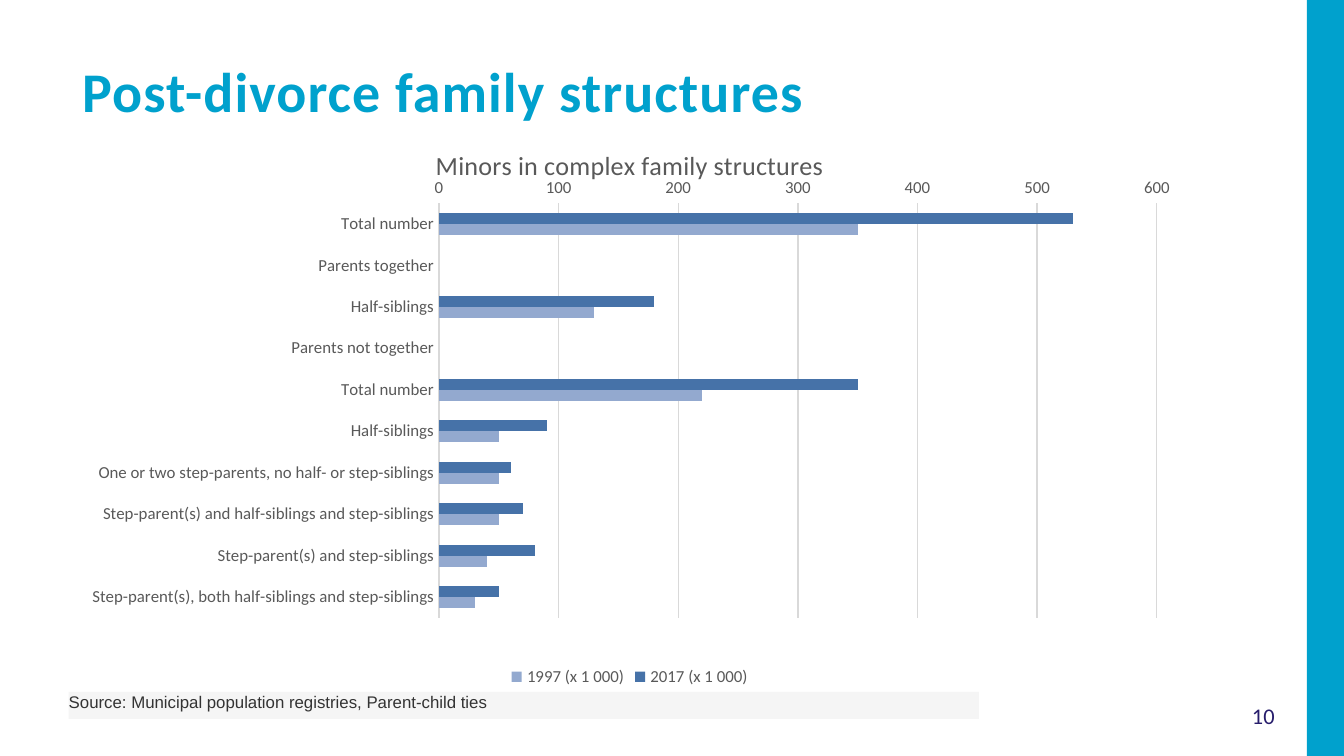
from dataclasses import dataclass

from lxml import etree
from pptx import Presentation
from pptx.chart.data import CategoryChartData
from pptx.dml.color import RGBColor
from pptx.enum import chart as charts, shapes, text
from pptx.oxml import ns
from pptx.util import Cm, Pt


@dataclass(frozen=True)
class Theme:
    font: str = "Calibri"
    source_font: str = "Arial"
    accent: str = "00A1CD"
    number: str = "271D6C"
    panel: str = "F5F5F5"
    ink: str = "333333"
    label: str = "595959"
    grid: str = "D9D9D9"
    title_size: float = 30
    chart_title_size: float = 14
    number_size: float = 12
    small_size: float = 9


THEME = Theme()
LEFT, WIDTH = Cm(1.3), Cm(21.2)
CHART_TOP, CHART_BOTTOM = Cm(2.34), Cm(13.08)

CATEGORIES = [
    "Total number",
    "Parents together",
    "Half-siblings",
    "Parents not together",
    "Total number",
    "Half-siblings",
    "One or two step-parents, no half- or step-siblings",
    "Step-parent(s) and half-siblings and step-siblings",
    "Step-parent(s) and step-siblings",
    "Step-parent(s), both half-siblings and step-siblings",
]
SERIES = [
    ("2017 (x 1 000)", "4672A8", [530, None, 180, None, 350, 90, 60, 70, 80, 50]),
    ("1997 (x 1 000)", "93A9CF", [350, None, 130, None, 220, 50, 50, 50, 40, 30]),
]


def style_font(font, size, color, name=THEME.font, bold=False):
    font.size, font.name, font.bold = Pt(size), name, bold
    font.color.rgb = RGBColor.from_string(color)


def add_span(para, words, size, color, **style):
    span = para.add_run()
    span.text = words
    style_font(span.font, size, color, **style)
    return span


def add_block(page, left, top, width, height, color):
    block = page.shapes.add_shape(
        shapes.MSO_SHAPE.RECTANGLE, left, top, width, height)
    block.shadow.inherit = False
    block.fill.solid()
    block.fill.fore_color.rgb = RGBColor.from_string(color)
    block.line.fill.background()
    return block


def set_title(page, words):
    title = page.shapes.title
    title.left, title.top, title.width, title.height = LEFT, Cm(0.94), WIDTH, Cm(1.4)
    frame = title.text_frame
    frame.word_wrap = True
    frame.auto_size = text.MSO_AUTO_SIZE.NONE
    frame.vertical_anchor = text.MSO_ANCHOR.TOP
    para = frame.paragraphs[0]
    para.alignment = text.PP_ALIGN.LEFT
    span = add_span(para, words, THEME.title_size, THEME.accent, bold=True)
    span.font._element.set("spc", "60")


def add_source(page, words):
    block = add_block(page, LEFT, CHART_BOTTOM, Cm(17.2), Cm(0.51), THEME.panel)
    frame = block.text_frame
    frame.word_wrap = True
    frame.vertical_anchor = text.MSO_ANCHOR.MIDDLE
    frame.margin_left = frame.margin_top = frame.margin_right = 0
    frame.margin_bottom = Cm(0.13)
    para = frame.paragraphs[0]
    para.alignment = text.PP_ALIGN.LEFT
    add_span(para, words, THEME.small_size, THEME.ink, name=THEME.source_font)


def add_page_number(page, number):
    box = page.shapes.add_textbox(Cm(23.06), CHART_BOTTOM, Cm(1.63), Cm(0.89))
    frame = box.text_frame
    frame.word_wrap = True
    frame.vertical_anchor = text.MSO_ANCHOR.MIDDLE
    para = frame.paragraphs[0]
    para.alignment = text.PP_ALIGN.CENTER
    add_span(para, str(number), THEME.number_size, THEME.number)


def place_plot(chart, **fractions):
    """Fix the inner plot area as fractions (x, y, w, h) of the chart."""
    plot_area = chart._chartSpace.chart.plotArea
    for old in plot_area.findall(ns.qn("c:layout")):
        plot_area.remove(old)
    layout = etree.Element(ns.qn("c:layout"))
    manual = etree.SubElement(layout, ns.qn("c:manualLayout"))
    settings = {"layoutTarget": "inner", "xMode": "edge", "yMode": "edge", **fractions}
    for tag, value in settings.items():
        etree.SubElement(manual, ns.qn(f"c:{tag}")).set("val", str(value))
    plot_area.insert(0, layout)


def style_axes(chart):
    category, value = chart.category_axis, chart.value_axis
    for axis in (category, value):
        axis.major_tick_mark = axis.minor_tick_mark = charts.XL_TICK_MARK.NONE
        style_font(axis.tick_labels.font, THEME.small_size, THEME.label)
    category.reverse_order = True
    category.crosses = charts.XL_AXIS_CROSSES.MAXIMUM
    category.has_major_gridlines = False
    value.minimum_scale, value.maximum_scale, value.major_unit = 0, 600, 100
    value.has_major_gridlines = True
    value.format.line.fill.background()
    for line in (category.format.line, value.major_gridlines.format.line):
        line.color.rgb = RGBColor.from_string(THEME.grid)
        line.width = Pt(0.75)


def add_bar_chart(page, title):
    data = CategoryChartData(number_format="0")
    data.categories = CATEGORIES
    for name, _, values in SERIES:
        data.add_series(name, values)
    chart = page.shapes.add_chart(
        charts.XL_CHART_TYPE.BAR_CLUSTERED, LEFT, CHART_TOP, WIDTH,
        CHART_BOTTOM - CHART_TOP, data).chart
    style_font(chart.font, THEME.small_size, THEME.label)

    chart.has_title = True
    para = chart.chart_title.text_frame.paragraphs[0]
    add_span(para, title, THEME.chart_title_size, THEME.label)
    chart.chart_title.include_in_layout = False

    chart.has_legend = True
    chart.legend.position = charts.XL_LEGEND_POSITION.BOTTOM
    chart.legend.include_in_layout = False
    style_font(chart.legend.font, THEME.small_size, THEME.label)

    style_axes(chart)
    plot = chart.plots[0]
    plot.gap_width, plot.overlap, plot.vary_by_categories = 182, 0, False
    for series, (_, color, _) in zip(plot.series, SERIES):
        series.format.fill.solid()
        series.format.fill.fore_color.rgb = RGBColor.from_string(color)
    place_plot(chart, x=0.33, y=0.14, w=0.64, h=0.73)


def main():
    deck = Presentation()
    deck.slide_width, deck.slide_height = Cm(25.4), Cm(14.29)
    page = deck.slides.add_slide(deck.slide_layouts.get_by_name("Title Only"))
    add_block(page, Cm(24.7), 0, Cm(0.7), deck.slide_height, THEME.accent)
    add_page_number(page, 10)
    set_title(page, "Post-divorce family structures")
    add_source(page, "Source: Municipal population registries, Parent-child ties")
    add_bar_chart(page, "Minors in complex family structures")
    deck.save("out.pptx")


if __name__ == "__main__":
    main()
